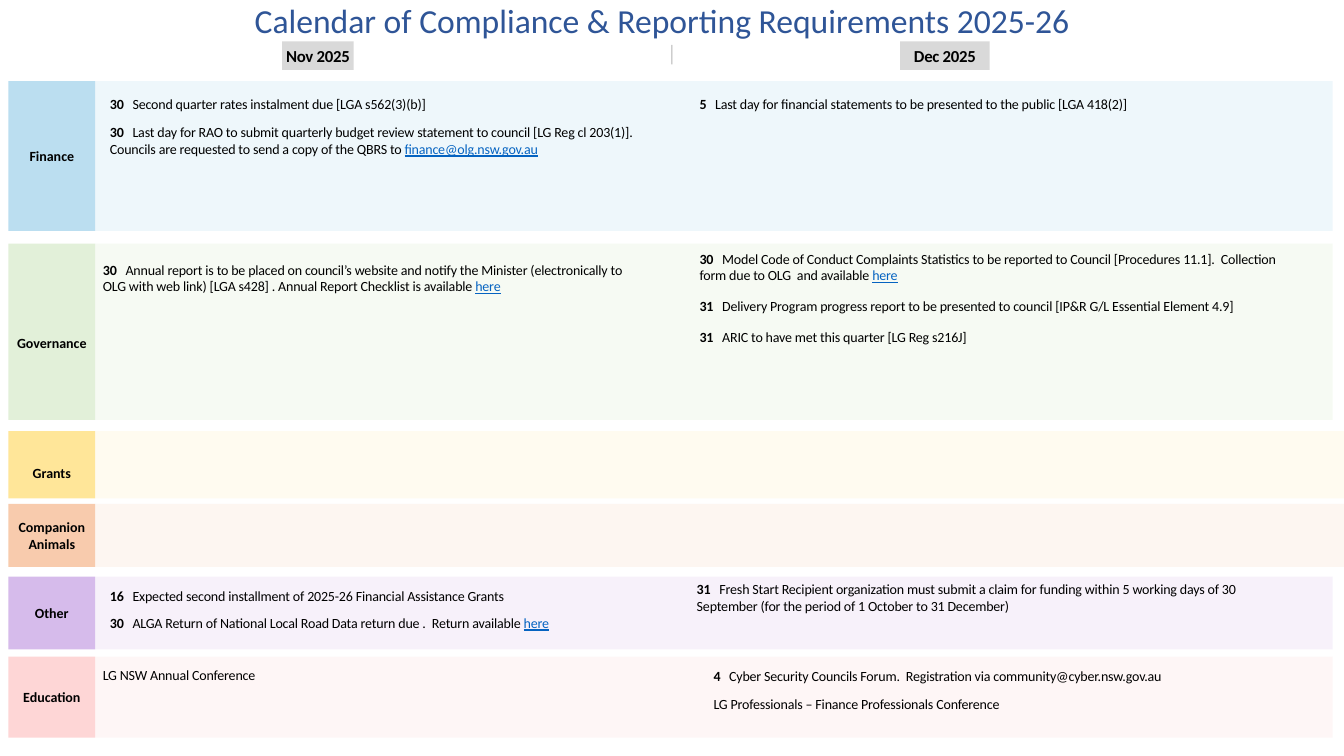
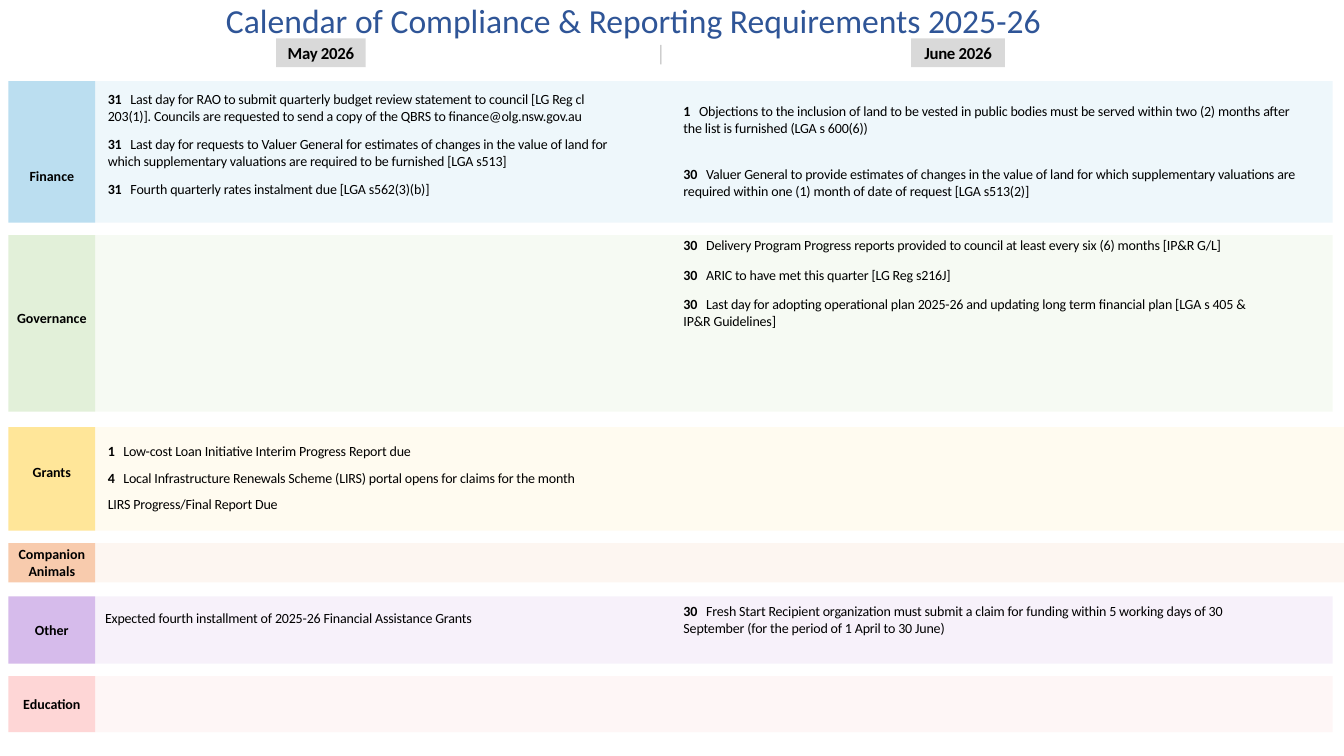
"""Build a two-slide calendar of compliance and reporting requirements."""
from dataclasses import dataclass

from lxml import etree
from pptx import Presentation
from pptx.dml.color import RGBColor
from pptx.enum.shapes import MSO_CONNECTOR, MSO_SHAPE
from pptx.enum.text import MSO_ANCHOR, PP_ALIGN
from pptx.oxml.ns import qn
from pptx.util import Pt

TOP, MIDDLE = MSO_ANCHOR.TOP, MSO_ANCHOR.MIDDLE
LEFT, CENTER = PP_ALIGN.LEFT, PP_ALIGN.CENTER
RECTANGLE = MSO_SHAPE.RECTANGLE
STRAIGHT = MSO_CONNECTOR.STRAIGHT

BLACK = RGBColor.from_string("000000")
TITLE_BLUE = RGBColor.from_string("2F5597")
LINK_BLUE = RGBColor.from_string("0563C1")
MONTH_GREY = RGBColor.from_string("D9D9D9")
SKY, PALE_SKY = RGBColor.from_string("BBDEF0"), RGBColor.from_string("ADD8ED")
GREEN, PALE_GREEN = RGBColor.from_string("E2F0D9"), RGBColor.from_string("D3E8C6")
YELLOW, PALE_YELLOW = RGBColor.from_string("FFE699"), RGBColor.from_string("FFECB7")
ORANGE, PALE_ORANGE = RGBColor.from_string("F8CBAD"), RGBColor.from_string("F9D5BD")
PURPLE, PALE_PURPLE = RGBColor.from_string("D6BBEB"), RGBColor.from_string("D7BCEA")
PINK = RGBColor.from_string("FED6D6")

FONT = "Calibri"
TITLE = "Calendar of Compliance & Reporting Requirements 2025-26"
PAGE_WIDTH, PAGE_HEIGHT = 960, 540
TITLE_WIDTH, TITLE_HEIGHT = 617, 36
TAB_LEFT, TAB_WIDTH = 6, 62
BAND_LEFT = TAB_LEFT + TAB_WIDTH
BAND_END = 952
LINE_HEIGHT = 12.2

SECTIONS = [
    ("Finance", SKY, PALE_SKY, BAND_END),
    ("Governance", GREEN, PALE_GREEN, BAND_END),
    ("Grants", YELLOW, PALE_YELLOW, PAGE_WIDTH),
    ("Companion Animals", ORANGE, PALE_ORANGE, PAGE_WIDTH),
    ("Other", PURPLE, PALE_PURPLE, BAND_END),
    ("Education", PINK, PINK, BAND_END),
]


@dataclass
class Cell:
    """Entries (day, text, link) of one section in one month."""
    top: float
    entries: list
    shift: float = 0
    wider: float = 0
    gap: float = 8


@dataclass
class Month:
    """A month heading and the column of cells under it."""
    name: str
    heading_left: float
    heading_width: float
    left: float
    width: float
    cells: list


@dataclass
class Page:
    """Two months and the (top, height, label drop) of each section."""
    center: float
    divider: float
    heading_top: float
    rows: list
    months: list


NOVEMBER = Month("Nov 2025", 201.6, 51, 78.5, 380, [
    Cell(68.4, [
        ("30", "Second quarter rates instalment due [LGA s562(3)(b)]", ""),
        ("30", "Last day for RAO to submit quarterly budget review statement to council "
         "[LG Reg cl 203(1)].  Councils are requested to send a copy of the QBRS to ",
         "finance@olg.nsw.gov.au"),
    ]),
    Cell(186.5, [
        ("30", "Annual report is to be placed on council’s website and notify the "
         "Minister (electronically to OLG with web link) [LGA s428] . Annual Report "
         "Checklist is available ", "here"),
    ], shift=-5),
    Cell(419.8, [
        ("16", "Expected second installment of 2025-26 Financial Assistance Grants", ""),
        ("30", "ALGA Return of National Local Road Data return due .  Return available ",
         "here"),
    ], gap=7),
    Cell(476.3, [("", "LG NSW Annual Conference", "")], shift=-5),
])

DECEMBER = Month("Dec 2025", 643, 64, 499.7, 424, [
    Cell(68.4, [
        ("5", "Last day for financial statements to be presented to the public "
         "[LGA 418(2)]", ""),
    ]),
    Cell(178.6, [
        ("30", "Model Code of Conduct Complaints Statistics to be reported to Council "
         "[Procedures 11.1].  Collection form due to OLG  and available ", "here"),
        ("31", "Delivery Program progress report to be presented to council "
         "[IP&R G/L Essential Element 4.9]", ""),
        ("31", "ARIC to have met this quarter [LG Reg s216J]", ""),
    ], gap=10),
    Cell(414.7, [
        ("31", "Fresh Start Recipient organization must submit a claim for funding "
         "within 5 working days of 30 September (for the period of 1 October to "
         "31 December)", ""),
    ], shift=-2),
    Cell(477, [
        ("4", "Cyber Security Councils Forum.  Registration via "
         "community@cyber.nsw.gov.au", ""),
        ("", "LG Professionals – Finance Professionals Conference", ""),
    ], shift=10),
])

MAY = Month("May 2026", 197.3, 64, 77, 364, [
    Cell(64.8, [
        ("31", "Last day for RAO to submit quarterly budget review statement to council "
         "[LG Reg cl 203(1)]. Councils are requested to send a copy of the QBRS to "
         "finance@olg.nsw.gov.au", ""),
        ("31", "Last day for requests to Valuer General for estimates of changes in the "
         "value of land for which supplementary valuations are required to be "
         "furnished [LGA s513]", ""),
        ("31", "Fourth quarterly rates instalment due [LGA s562(3)(b)]", ""),
    ]),
    Cell(316.1, [
        ("1", "Low-cost Loan Initiative Interim Progress Report due", ""),
        ("4", "Local Infrastructure Renewals Scheme (LIRS) portal opens for claims for "
         "the month", ""),
        ("", "LIRS Progress/Final Report Due", ""),
    ], gap=7),
    Cell(435.6, [
        ("", "Expected fourth installment of 2025-26 Financial Assistance Grants", ""),
    ], shift=-2),
])

JUNE = Month("June 2026", 650.9, 67, 488.2, 420, [
    Cell(73.4, [
        ("1", "Objections to the inclusion of land to be vested in public bodies must be "
         "served within two (2) months after the list is furnished (LGA s 600(6))", ""),
        ("30", "Valuer General to provide estimates of changes in the value of land for "
         "which supplementary valuations are required within one (1) month of date "
         "of request [LGA s513(2)]", ""),
    ], wider=22, gap=21),
    Cell(169.2, [
        ("30", "Delivery Program Progress reports provided to council at least every "
         "six (6) months [IP&R G/L]", ""),
        ("30", "ARIC to have met this quarter [LG Reg s216J]", ""),
        ("30", "Last day for adopting operational plan 2025-26 and updating long term "
         "financial plan [LGA s 405 & IP&R Guidelines]", ""),
    ], gap=9),
    Cell(430.6, [
        ("30", "Fresh Start Recipient organization must submit a claim for funding "
         "within 5 working days of 30 September (for the period of 1 April to "
         "30 June)", ""),
    ]),
])

PAGES = [
    Page(473, 480, 29.5,
         [(58, 107, 0), (174, 126, 8), (308, 48, 6), (360, 45, 0), (412, 52, 0),
          (469, 58, 0)], [NOVEMBER, DECEMBER]),
    Page(452.5, 472, 27.4,
         [(58, 101, 17), (168, 126, -4), (305, 74, -5), (388, 28, 0), (426, 48, 0),
          (483, 40, 0)], [MAY, JUNE]),
]


def add_text(paragraph, text, size=10, bold=False, color=BLACK, underline=None,
             spacing=0, align=LEFT):
    """Append one formatted run to a paragraph."""
    paragraph.alignment = align
    run = paragraph.add_run()
    run.text = text
    run.font.name = FONT
    run.font.size = Pt(size)
    run.font.bold = bold
    run.font.underline = underline
    run.font.color.rgb = color
    if spacing:
        run._r.get_or_add_rPr().set("spc", str(round(spacing * 100)))


def set_opacity(shape, percent):
    """Make the colour of a shape or line partly transparent."""
    for color in shape._element.spPr.iter(qn("a:srgbClr")):
        etree.SubElement(color, qn("a:alpha")).set("val", str(percent * 1000))


def set_frame(frame, anchor, wrap=True, drop=0):
    """Anchor a text frame and lower its centre by unequal insets."""
    frame.word_wrap = wrap
    frame.vertical_anchor = anchor
    frame.margin_left = frame.margin_right = Pt(0)
    frame.margin_top = Pt(max(0, 2 * drop))
    frame.margin_bottom = Pt(max(0, -2 * drop))


class Calendar:
    """Hold the presentation, the current slide and the calendar's style."""

    def __init__(self):
        self.deck = Presentation()
        self.deck.slide_width, self.deck.slide_height = Pt(PAGE_WIDTH), Pt(PAGE_HEIGHT)
        self.slide = None

    def start_page(self, center):
        self.slide = self.deck.slides.add_slide(self.deck.slide_layouts[5])
        title = self.slide.shapes.title
        title.left, title.top = Pt(center - TITLE_WIDTH / 2), Pt(-4)
        title.width, title.height = Pt(TITLE_WIDTH), Pt(TITLE_HEIGHT)
        title.text_frame.vertical_anchor = TOP
        add_text(title.text_frame.paragraphs[0], TITLE, size=24, color=TITLE_BLUE,
                 align=CENTER)

    def block(self, left, top, width, height, color):
        block = self.slide.shapes.add_shape(
            RECTANGLE, Pt(left), Pt(top), Pt(width), Pt(height))
        block.shadow.inherit = False
        block.fill.solid()
        block.fill.fore_color.rgb = color
        block.line.fill.background()
        return block

    def section(self, name, color, tint, end, top, height, drop):
        band = self.block(BAND_LEFT, top, end - BAND_LEFT, height, tint)
        set_opacity(band, 20)
        frame = self.block(TAB_LEFT, top, TAB_WIDTH, height, color).text_frame
        set_frame(frame, MIDDLE, drop=drop)
        add_text(frame.paragraphs[0], name, bold=True, align=CENTER)

    def heading(self, month, top):
        frame = self.block(month.heading_left, top, month.heading_width, 20.5,
                           MONTH_GREY).text_frame
        set_frame(frame, MIDDLE, wrap=False)
        add_text(frame.paragraphs[0], month.name, size=12, bold=True, spacing=-0.2,
                 align=CENTER)

    def divider(self, x):
        divider = self.slide.shapes.add_connector(STRAIGHT, Pt(x), Pt(32), Pt(x), Pt(46))
        divider.line.color.rgb = BLACK
        divider.line.width = Pt(0.75)
        set_opacity(divider, 30)
        etree.SubElement(divider._element.spPr, qn("a:effectLst"))

    def cell(self, cell, left, width):
        height = len(cell.entries) * (LINE_HEIGHT + cell.gap)
        frame = self.slide.shapes.add_textbox(
            Pt(left + cell.shift), Pt(cell.top), Pt(width + cell.wider),
            Pt(height)).text_frame
        set_frame(frame, TOP)
        for index, (day, text, link) in enumerate(cell.entries):
            paragraph = frame.add_paragraph() if index else frame.paragraphs[0]
            paragraph.space_after = Pt(cell.gap)
            if day:
                stops = etree.SubElement(paragraph._p.get_or_add_pPr(), qn("a:tabLst"))
                indent = Pt(6 + 5.1 * len(day))
                etree.SubElement(stops, qn("a:tab"), pos=str(indent), algn="l")
                add_text(paragraph, day + "\t", bold=True, spacing=-0.1)
            add_text(paragraph, text, spacing=-0.1)
            if link:
                add_text(paragraph, link, color=LINK_BLUE, underline=True, spacing=-0.1)

    def page(self, page):
        self.start_page(page.center)
        for style, row in zip(SECTIONS, page.rows):
            self.section(*style, *row)
        self.divider(page.divider)
        for month in page.months:
            self.heading(month, page.heading_top)
            for cell in month.cells:
                self.cell(cell, month.left, month.width)


def main():
    """Build every page and save the calendar."""
    calendar = Calendar()
    for page in PAGES:
        calendar.page(page)
    calendar.deck.save("out.pptx")


if __name__ == "__main__":
    main()
